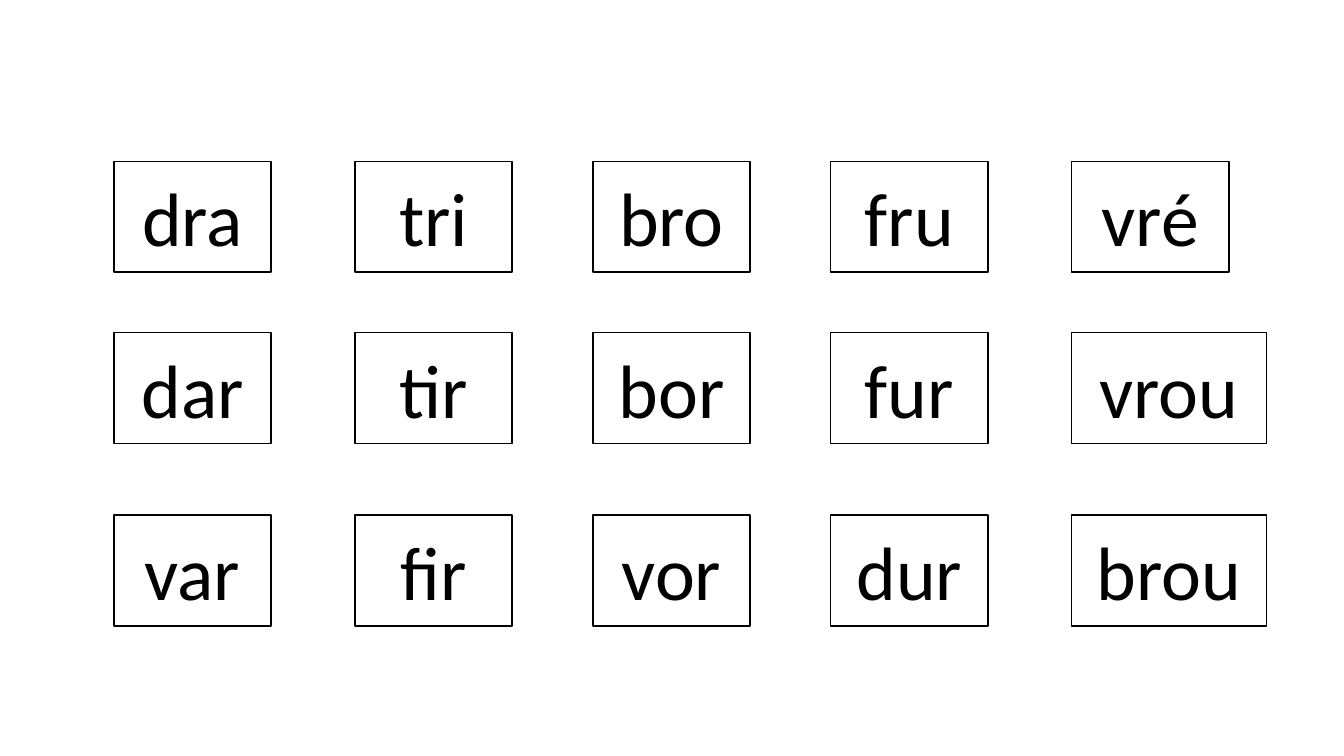
from pptx import Presentation
from pptx.dml.color import RGBColor
from pptx.enum.shapes import MSO_SHAPE as Shape
from pptx.enum.text import MSO_ANCHOR as Anchor, PP_ALIGN as Align
from pptx.util import Inches, Pt

COLORS = {"card": "FFFFFF", "ink": "000000"}
FONT = "Calibri"

# Card grid, in inches
COLUMNS = [1.13, 3.52, 5.88, 8.24, 10.63]
ROWS = [1.6, 3.3, 5.11]
CARD_HEIGHT = 1.1
CARD_WIDTH, WIDE_CARD_WIDTH = 1.56, 1.93

SYLLABLES = [
    ["dra", "tri", "bro", "fru", "vré"],
    ["dar", "tir", "bor", "fur", "vrou"],
    ["var", "fir", "vor", "dur", "brou"],
]


def color(name):
    return RGBColor.from_string(COLORS[name])


def add_card(slide, syllable, left, top, width, height):
    """Place one outlined card with a centred syllable."""
    card = slide.shapes.add_shape(
        Shape.RECTANGLE, Inches(left), Inches(top), Inches(width), Inches(height))
    card.shadow.inherit = False
    card.fill.solid()
    card.fill.fore_color.rgb = color("card")
    card.line.color.rgb = color("ink")
    card.line.width = Pt(1)

    # Syllable
    frame = card.text_frame
    frame.text = syllable
    frame.word_wrap = True
    frame.vertical_anchor = Anchor.MIDDLE
    para = frame.paragraphs[0]
    para.alignment = Align.CENTER
    font = para.runs[0].font
    font.name = FONT
    font.size = Pt(54)
    font.color.rgb = color("ink")


def add_syllable_grid(slide, columns, rows):
    """Fill the grid; four-letter syllables get a wider card."""
    for top, syllables in zip(rows, SYLLABLES):
        for left, syllable in zip(columns, syllables):
            width = WIDE_CARD_WIDTH if len(syllable) > 3 else CARD_WIDTH
            add_card(slide, syllable, left, top, width, CARD_HEIGHT)


def main():
    deck = Presentation()
    deck.slide_width, deck.slide_height = Inches(13.33), Inches(7.5)
    slide = deck.slides.add_slide(deck.slide_layouts[6])
    add_syllable_grid(slide, COLUMNS, ROWS)
    deck.save("out.pptx")


if __name__ == "__main__":
    main()
